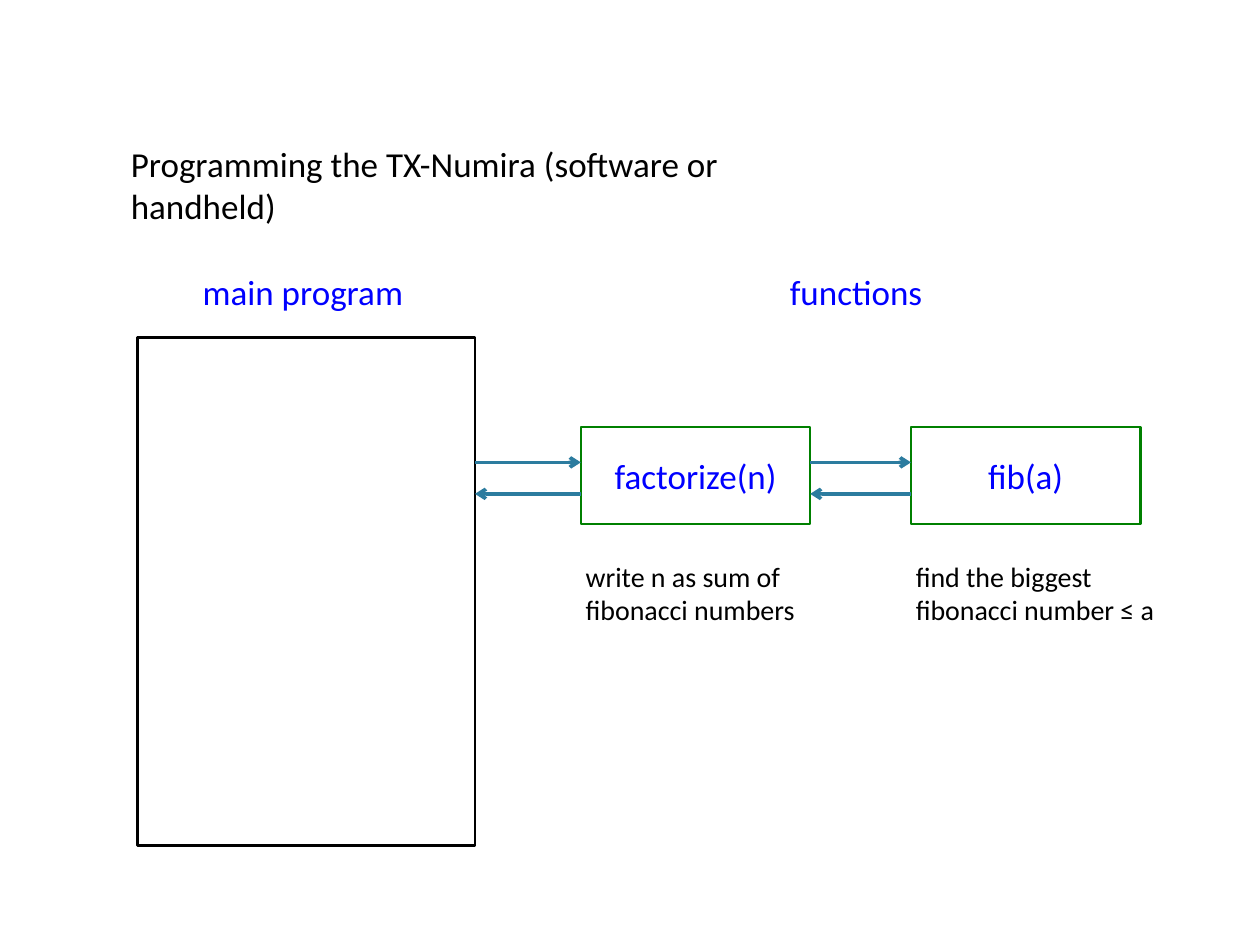
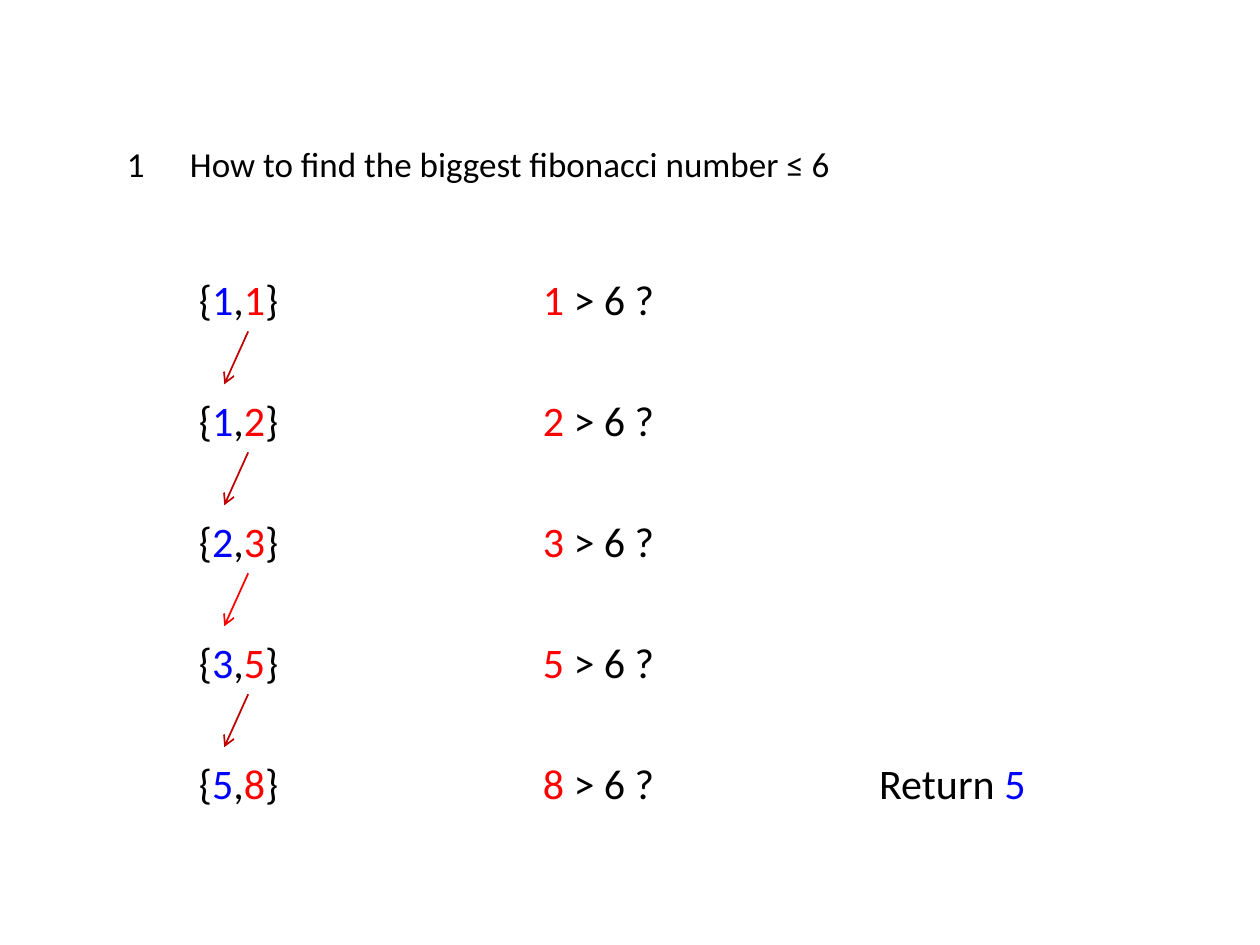
from dataclasses import dataclass

from lxml import etree
from pptx import Presentation
from pptx.dml.color import RGBColor
from pptx.enum import shapes, text
from pptx.oxml import ns
from pptx.util import Inches, Pt


@dataclass(frozen=True)
class Theme:
    font: str = "Calibri"
    black: str = "000000"
    blue: str = "0000FF"
    red: str = "FF0000"
    dark_red: str = "C00000"
    green: str = "008000"
    teal: str = "2C7C9F"
    note_size: int = 16
    title_size: int = 20
    step_size: int = 24
    box_line: float = 1.5
    call_line: float = 2
    step_line: float = 1


THEME = Theme()

# Content: text pieces are (words, colour); places are in inches
PROGRAM_TITLE = "Programming the TX-Numira (software or handheld)"
COLUMN_HEADINGS = [("main program", 1.51, 1.82), ("functions", 6.17, 1.26)]
MAIN_PROGRAM = (1.09, 2.68, 2.68, 4.03)
FUNCTIONS = [
    ("factorize(n)", "write n as sum of fibonacci numbers", 4.61, 1.92),
    ("fib(a)", "find the biggest fibonacci number ≤ a", 7.23, 2.24),
]

SEARCH_TITLE = "1\tHow to find the biggest fibonacci number ≤ 6"
LIMIT = 6
PAIRS = [(1, 1), (1, 2), (2, 3), (3, 5), (5, 8)]
STEP_COLOURS = [THEME.dark_red, THEME.dark_red, THEME.red, THEME.dark_red]

# Layout
TITLE_TOP, LINE_HEIGHT = 1.08, 0.44
HEADING_TOP = 2.1
FUNCTION_TOP, FUNCTION_WIDTH, FUNCTION_HEIGHT = 3.39, 1.82, 0.77
NOTE_TOP, NOTE_HEIGHT, NOTE_OUTDENT = 4.39, 0.64, 0.06
CALL_Y, RETURN_Y = 3.67, 3.92
TITLE_TAB = 0.5
STEP_TOP, STEP_PITCH, STEP_HEIGHT = 2.12, 0.96, 0.5
PAIR_LEFT, TEST_LEFT, RESULT_LEFT = 1.48, 4.21, 6.88
STEP_FROM, STEP_TO = (1.97, 0.51), (1.78, 0.93)


def inches(*lengths):
    return [Inches(length) for length in lengths]


def add_text(slide, place, pieces, size, wrap=False, tab=None):
    """Add one paragraph made of (words, colour) pieces."""
    box = slide.shapes.add_textbox(*inches(*place))
    frame = box.text_frame
    frame.word_wrap = wrap
    frame.auto_size = text.MSO_AUTO_SIZE.SHAPE_TO_FIT_TEXT
    paragraph = frame.paragraphs[0]
    if tab:
        stops = etree.SubElement(paragraph._p.get_or_add_pPr(), ns.qn("a:tabLst"))
        etree.SubElement(stops, ns.qn("a:tab"), pos=str(Inches(tab)), algn="l")
    for words, colour in pieces:
        run = paragraph.add_run()
        run.text = words
        style(run.font, size, colour)


def style(font, size, colour):
    font.name = THEME.font
    font.size = Pt(size)
    font.color.rgb = RGBColor.from_string(colour)


def add_title(slide, left, width, words, tab=None):
    place = (left, TITLE_TOP, width, LINE_HEIGHT)
    add_text(slide, place, [(words, THEME.black)], THEME.title_size, tab=tab)


def add_box(slide, place, colour, label=""):
    box = slide.shapes.add_shape(shapes.MSO_SHAPE.RECTANGLE, *inches(*place))
    box.shadow.inherit = False
    box.fill.background()
    box.line.color.rgb = RGBColor.from_string(colour)
    box.line.width = Pt(THEME.box_line)
    if label:
        box.text_frame.text = label
        paragraph = box.text_frame.paragraphs[0]
        paragraph.alignment = text.PP_ALIGN.CENTER
        style(paragraph.runs[0].font, THEME.title_size, THEME.blue)


def add_arrow(slide, start, end, colour, width):
    arrow = slide.shapes.add_connector(
        shapes.MSO_CONNECTOR.STRAIGHT, *inches(*start, *end))
    arrow.line.color.rgb = RGBColor.from_string(colour)
    arrow.line.width = Pt(width)
    etree.SubElement(arrow.line._get_or_add_ln(), ns.qn("a:tailEnd"), type="arrow")
    etree.SubElement(arrow._element.spPr, ns.qn("a:effectLst"))


def build_program(slide):
    add_title(slide, 0.94, 6.04, PROGRAM_TITLE)
    for heading, left, width in COLUMN_HEADINGS:
        place = (left, HEADING_TOP, width, LINE_HEIGHT)
        add_text(slide, place, [(heading, THEME.blue)], THEME.title_size)

    add_box(slide, MAIN_PROGRAM, THEME.black)
    caller_right = MAIN_PROGRAM[0] + MAIN_PROGRAM[2]
    for name, note, left, note_width in FUNCTIONS:
        add_box(slide, (left, FUNCTION_TOP, FUNCTION_WIDTH, FUNCTION_HEIGHT),
                THEME.green, name)
        add_text(slide, (left - NOTE_OUTDENT, NOTE_TOP, note_width, NOTE_HEIGHT),
                 [(note, THEME.black)], THEME.note_size, wrap=True)
        for start, end, y in ((caller_right, left, CALL_Y),
                              (left, caller_right, RETURN_Y)):
            add_arrow(slide, (start, y), (end, y), THEME.teal, THEME.call_line)
        caller_right = left + FUNCTION_WIDTH


def build_search(slide):
    add_title(slide, 0.91, 5.83, SEARCH_TITLE, tab=TITLE_TAB)
    tops = [STEP_TOP + row * STEP_PITCH for row in range(len(PAIRS))]
    for (smaller, bigger), top in zip(PAIRS, tops):
        pair = [("{", THEME.black), (str(smaller), THEME.blue), (",", THEME.black),
                (str(bigger), THEME.red), ("}", THEME.black)]
        test = [(str(bigger), THEME.red), (f" > {LIMIT} ?", THEME.black)]
        add_text(slide, (PAIR_LEFT, top, 0.85, STEP_HEIGHT), pair, THEME.step_size)
        add_text(slide, (TEST_LEFT, top, 1.1, STEP_HEIGHT), test, THEME.step_size)

    result = [("Return ", THEME.black), (str(PAIRS[-1][0]), THEME.blue)]
    add_text(slide, (RESULT_LEFT, tops[-1], 1.56, STEP_HEIGHT), result,
             THEME.step_size, wrap=True)
    for top, colour in zip(tops, STEP_COLOURS):
        start, end = ((x, top + drop) for x, drop in (STEP_FROM, STEP_TO))
        add_arrow(slide, start, end, colour, THEME.step_line)


def main():
    deck = Presentation()
    deck.slide_width, deck.slide_height = inches(10, 7.5)
    blank = deck.slide_layouts[6]
    for build in (build_program, build_search):
        build(deck.slides.add_slide(blank))
    deck.save("out.pptx")


if __name__ == "__main__":
    main()
